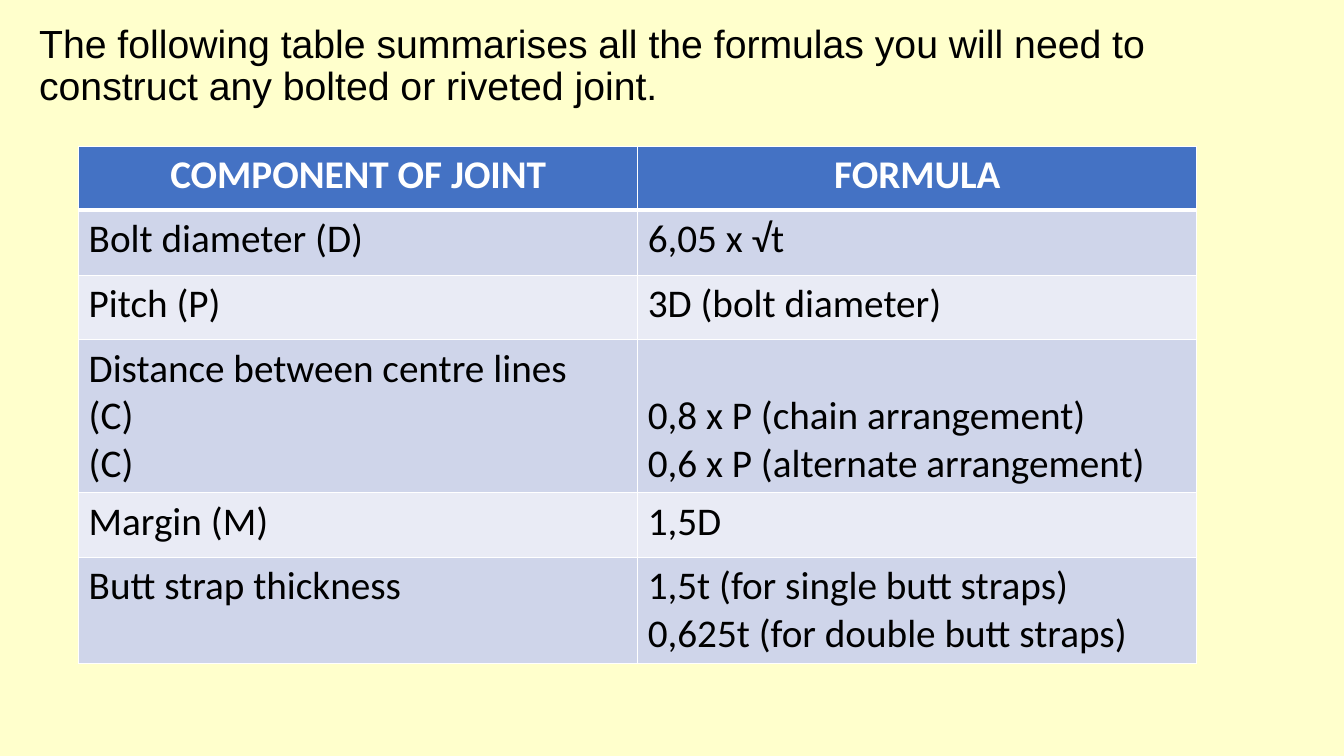
"""Build the slide that tabulates the bolted and riveted joint formulas."""
from dataclasses import dataclass

from lxml import etree
from pptx import Presentation
from pptx.dml.color import RGBColor
from pptx.enum import text
from pptx.oxml import ns
from pptx.util import Inches, Pt


@dataclass(frozen=True)
class Theme:
    """Colours, fonts and type size of the slide."""
    background: str = "FFFFCC"
    ink: str = "000000"
    header_ink: str = "FFFFFF"
    header_fill: str = "4472C4"
    bands: tuple[str, str] = ("CFD5EA", "E9EBF5")
    border: str = "FFFFFF"
    intro_font: str = "Arial"
    table_font: str = "Calibri"
    size: int = 28


@dataclass(frozen=True)
class FormulaRow:
    """One table row: the lines of both cells and the row height in inches."""
    component: tuple[str, ...]
    formula: tuple[str, ...]
    height: float
    formula_anchor: text.MSO_ANCHOR = text.MSO_ANCHOR.TOP


THEME = Theme()
INTRO = ("The following table summarises all the formulas you will need to "
         "construct any bolted or riveted joint.")
ROWS = (
    FormulaRow(("COMPONENT OF JOINT",), ("FORMULA",), 0.63),
    FormulaRow(("Bolt diameter (D)",), ("6,05 x √t",), 0.65),
    FormulaRow(("Pitch (P)",), ("3D (bolt diameter)",), 0.64),
    FormulaRow(("Distance between centre lines", "(C)", "(C)"),
               ("0,8 x P (chain arrangement)", "0,6 x P (alternate arrangement)"),
               1.52, text.MSO_ANCHOR.BOTTOM),
    FormulaRow(("Margin (M)",), ("1,5D",), 0.64),
    FormulaRow(("Butt strap thickness",),
               ("1,5t (for single butt straps)", "0,625t (for double butt straps)"), 1.05),
)


def write_lines(frame, lines: tuple[str, ...], font: str, ink: str,
                bold: bool = False, **layout) -> None:
    """Write each line as a paragraph with the given format."""
    for index, line in enumerate(lines):
        para = frame.paragraphs[0] if index == 0 else frame.add_paragraph()
        for name, value in layout.items():
            setattr(para, name, value)
        span = para.add_run()
        span.text = line
        for name, value in {"name": font, "size": Pt(THEME.size), "bold": bold}.items():
            setattr(span.font, name, value)
        span.font.color.rgb = RGBColor.from_string(ink)


def add_borders(cell, widths: dict[str, int]) -> None:
    """Draw the cell borders, with a width in points for each side."""
    properties = cell._tc.get_or_add_tcPr()
    for side, width in widths.items():
        line = etree.SubElement(properties, ns.qn(f"a:ln{side}"), w=str(Pt(width)))
        fill = etree.SubElement(line, ns.qn("a:solidFill"))
        etree.SubElement(fill, ns.qn("a:srgbClr"), val=THEME.border)


def add_intro(page) -> None:
    """Add the introductory sentence."""
    box = page.shapes.add_textbox(Inches(0.29), Inches(0.19), Inches(12.7), Inches(7.31))
    box.text_frame.word_wrap = True
    write_lines(box.text_frame, (INTRO,), THEME.intro_font, THEME.ink,
                line_spacing=0.9, space_before=Pt(10))


def add_formula_table(page) -> None:
    """Add the table of components and formulas."""
    height = sum(row.height for row in ROWS)
    table = page.shapes.add_table(len(ROWS), 2, Inches(0.78), Inches(1.45),
                                  Inches(11.09), Inches(height)).table
    for index, row in enumerate(ROWS):
        header = index == 0
        table.rows[index].height = Inches(row.height)
        fill = THEME.header_fill if header else THEME.bands[(index - 1) % 2]
        ink = THEME.header_ink if header else THEME.ink
        alignment = text.PP_ALIGN.CENTER if header else text.PP_ALIGN.LEFT
        widths = {"L": 1, "R": 1, "T": 3 if index == 1 else 1, "B": 3 if header else 1}
        for column, lines in enumerate((row.component, row.formula)):
            cell = table.cell(index, column)
            add_borders(cell, widths)
            cell.fill.solid()
            cell.fill.fore_color.rgb = RGBColor.from_string(fill)
            write_lines(cell.text_frame, lines, THEME.table_font, ink, header,
                        alignment=alignment)
        table.cell(index, 1).vertical_anchor = row.formula_anchor


def main() -> None:
    """Build and save the deck."""
    deck = Presentation()
    deck.slide_width, deck.slide_height = Inches(13.33), Inches(7.5)
    page = deck.slides.add_slide(deck.slide_layouts[6])
    page.background.fill.solid()
    page.background.fill.fore_color.rgb = RGBColor.from_string(THEME.background)
    add_intro(page)
    add_formula_table(page)
    deck.save("out.pptx")


if __name__ == "__main__":
    main()
